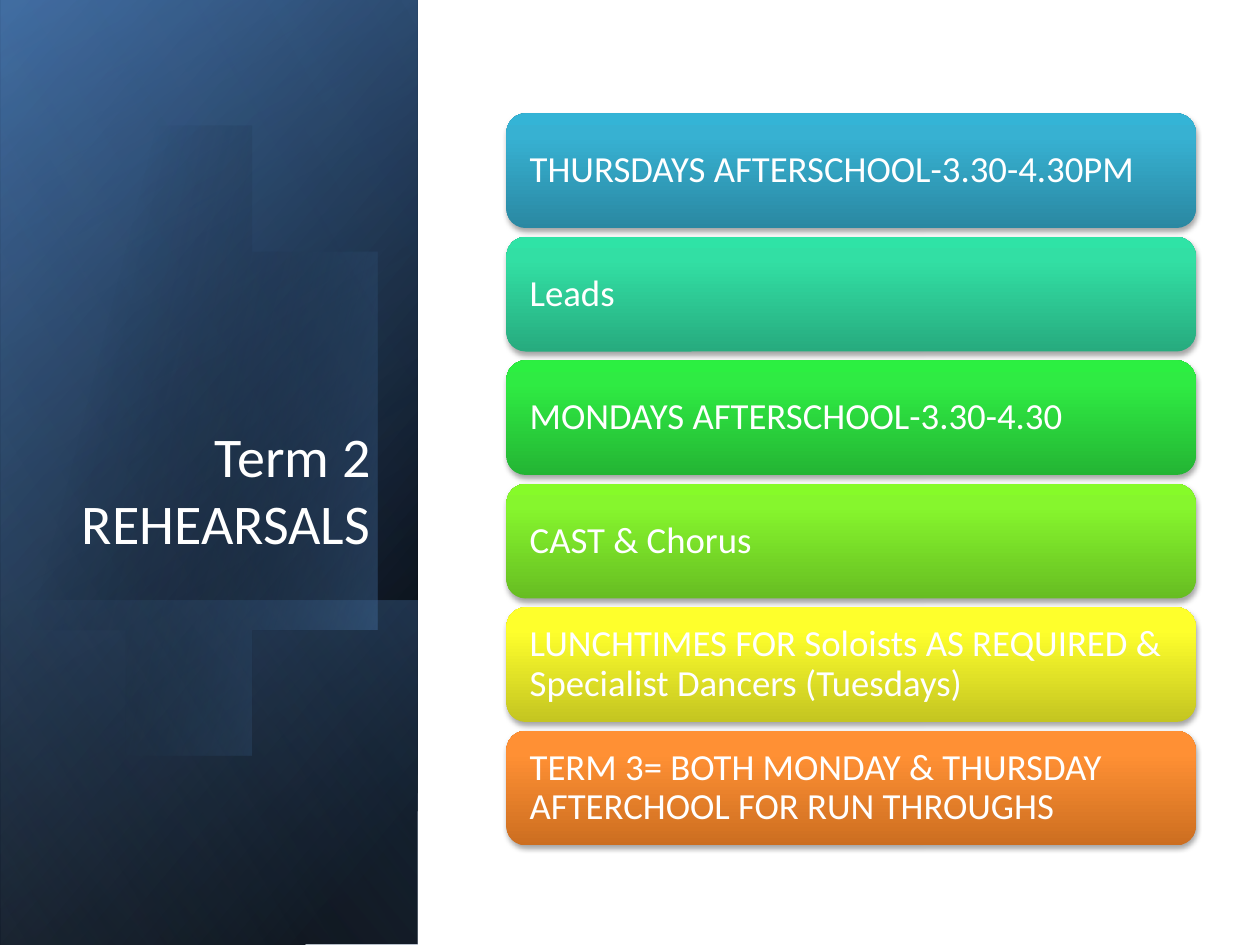
from pptx import Presentation
from pptx import util as u
from pptx.dml.color import RGBColor
from pptx.enum import shapes, text
from pptx.oxml import parse_xml
from pptx.oxml.ns import nsdecls, qn

Inches = u.Inches


def rgb(value):
    return RGBColor.from_string(value)


def write(tf, words, size=21, color="FFFFFF", font="Calibri", align="LEFT",
          anchor="MIDDLE", spacing=1.0, inset=(0.1, 0.05)):
    tf.word_wrap = True
    tf.vertical_anchor = text.MSO_ANCHOR[anchor]
    tf.margin_left = tf.margin_right = Inches(inset[0])
    tf.margin_top = tf.margin_bottom = Inches(inset[1])
    p = tf.paragraphs[0]
    p.alignment = text.PP_ALIGN[align]
    p.line_spacing = spacing
    r = p.add_run()
    r.text = words
    r.font.size, r.font.name = u.Pt(size), font
    r.font.color.rgb = rgb(color)


def bezier(p0, p1, p2, p3, steps=24):
    """Points along a cubic curve, without its start."""
    for i in range(1, steps + 1):
        t = i / steps
        weights = ((1 - t) ** 3, 3 * t * (1 - t) ** 2, 3 * t * t * (1 - t), t ** 3)
        yield tuple(sum(w * p[axis] for w, p in zip(weights, (p0, p1, p2, p3)))
                    for axis in (0, 1))


class Slide:
    def __init__(self, prs):
        self.s = prs.slides.add_slide(prs.slide_layouts[6])

    def paint(self, sp, stops, angle):
        """Gradient stops are (position %, colour, opacity %)."""
        gs = "".join(
            f'<a:gs pos="{pos * 1000}"><a:srgbClr val="{color}">'
            f'<a:alpha val="{alpha * 1000}"/></a:srgbClr></a:gs>'
            for pos, color, alpha in stops)
        sp.shadow.inherit = False
        sp.line.fill.background()
        sp.fill.background()
        spPr = sp.element.spPr
        spPr.replace(spPr.find(qn("a:noFill")), parse_xml(
            f'<a:gradFill {nsdecls("a")} rotWithShape="1"><a:gsLst>{gs}</a:gsLst>'
            f'<a:lin ang="{angle * 60000}" scaled="0"/></a:gradFill>'))

    def shape(self, kind, x, y, w, h, stops, angle):
        sp = self.s.shapes.add_shape(kind, *map(Inches, (x, y, w, h)))
        self.paint(sp, stops, angle)
        return sp

    def panel(self, x, y, w, h, stops, angle):
        """Rectangle turned a quarter and mirrored."""
        sp = self.shape(shapes.MSO_SHAPE.RECTANGLE, x, y, w, h, stops, angle)
        sp.rotation = 90
        sp.element.spPr.find(qn("a:xfrm")).set("flipH", "1")

    def outline(self, points, stops, angle):
        fb = self.s.shapes.build_freeform(*points[0], scale=Inches(1))
        fb.add_line_segments(points[1:], close=True)
        self.paint(fb.convert_to_shape(), stops, angle)

    def title(self, x, y, w, h, words):
        sp = self.s.shapes.add_textbox(*map(Inches, (x, y, w, h)))
        write(sp.text_frame, words, size=32, align="RIGHT", anchor="BOTTOM")

    def card(self, x, y, w, h, words, colors):
        stops = [(pos, c, 100) for pos, c in zip((0, 80, 100), colors)]
        sp = self.shape(shapes.MSO_SHAPE.ROUNDED_RECTANGLE, x, y, w, h, stops, 270)
        sp.element.spPr.find(qn("a:effectLst")).append(parse_xml(
            f'<a:outerShdw {nsdecls("a")} blurRad="{u.Pt(3.1)}" dist="{u.Pt(1.8)}" '
            'dir="5400000" rotWithShape="0"><a:srgbClr val="000000">'
            '<a:alpha val="35000"/></a:srgbClr></a:outerShdw>'))
        write(sp.text_frame, words, spacing=0.9, inset=(0.14, 0.14))


CARDS = [
    ("THURSDAYS AFTERSCHOOL-3.30-4.30PM", ("2A88A2", "37B1D2", "34B4D6")),
    ("Leads", ("27AB7E", "32DFA4", "2FE3A6")),
    ("MONDAYS AFTERSCHOOL-3.30-4.30", ("24B534", "2FEB43", "2CEF41")),
    ("CAST & Chorus", ("67BD22", "86F62D", "86FB29")),
    ("LUNCHTIMES FOR Soloists AS REQUIRED & Specialist Dancers (Tuesdays)",
     ("C4C521", "FEFF2C", "FEFF2D")),
    ("TERM 3= BOTH MONDAY & THURSDAY AFTERCHOOL FOR RUN THROUGHS",
     ("CC6E20", "FF9034", "FF9136")),
]

# Curves of the blob: start, two handles, end
RIGHT_SIDE = [
    ((0.96, 1.14), (1.71, 1.22), (2.44, 1.92), (2.73, 2.9)),
    ((2.73, 2.9), (3.07, 4.12), (2.62, 5.31), (1.71, 5.57)),
    ((1.71, 5.57), (1.14, 5.74), (0.53, 5.5), (0.07, 5)),
]
LEFT_SIDE = [(-0.03, 4.88), (-0.25, 1.66), (-0.15, 1.54)]
TOP = [
    ((-0.15, 1.54), (0.02, 1.37), (0.22, 1.25), (0.45, 1.18)),
    ((0.45, 1.18), (0.62, 1.13), (0.79, 1.12), (0.96, 1.14)),
]


def main():
    prs = Presentation()
    prs.slide_width, prs.slide_height = Inches(10), Inches(7.5)
    slide = Slide(prs)

    # Layered blue side panel
    side = (-2.09, 2.09, 7.5, 3.31)
    slide.panel(*side, [(8, "000000", 100), (100, "376092", 100)], 50)
    slide.panel(*side, [(0, "000000", 0), (99, "4F81BD", 46)], 30)
    slide.panel(0.29, 4.48, 2.74, 3.31, [(2, "4F81BD", 29), (100, "000000", 30)], 130)

    # Soft blob
    blob = [RIGHT_SIDE[0][0]]
    for curve in RIGHT_SIDE:
        blob += bezier(*curve)
    blob += LEFT_SIDE
    for curve in TOP:
        blob += bezier(*curve)
    slide.outline(blob, [(29, "000000", 0), (100, "4F81BD", 43)], 14)

    # Light veil and title
    slide.panel(*side, [(0, "000000", 0), (99, "95B3D7", 11)], 120)
    slide.title(0.48, 1.84, 2.56, 2.62, "Term 2 REHEARSALS")

    # Rehearsal cards
    top, pitch = 0.9, 0.98
    for i, (words, colors) in enumerate(CARDS):
        slide.card(4.02, top + i * pitch, 5.47, 0.91, words, colors)

    prs.save("out.pptx")


if __name__ == "__main__":
    main()
